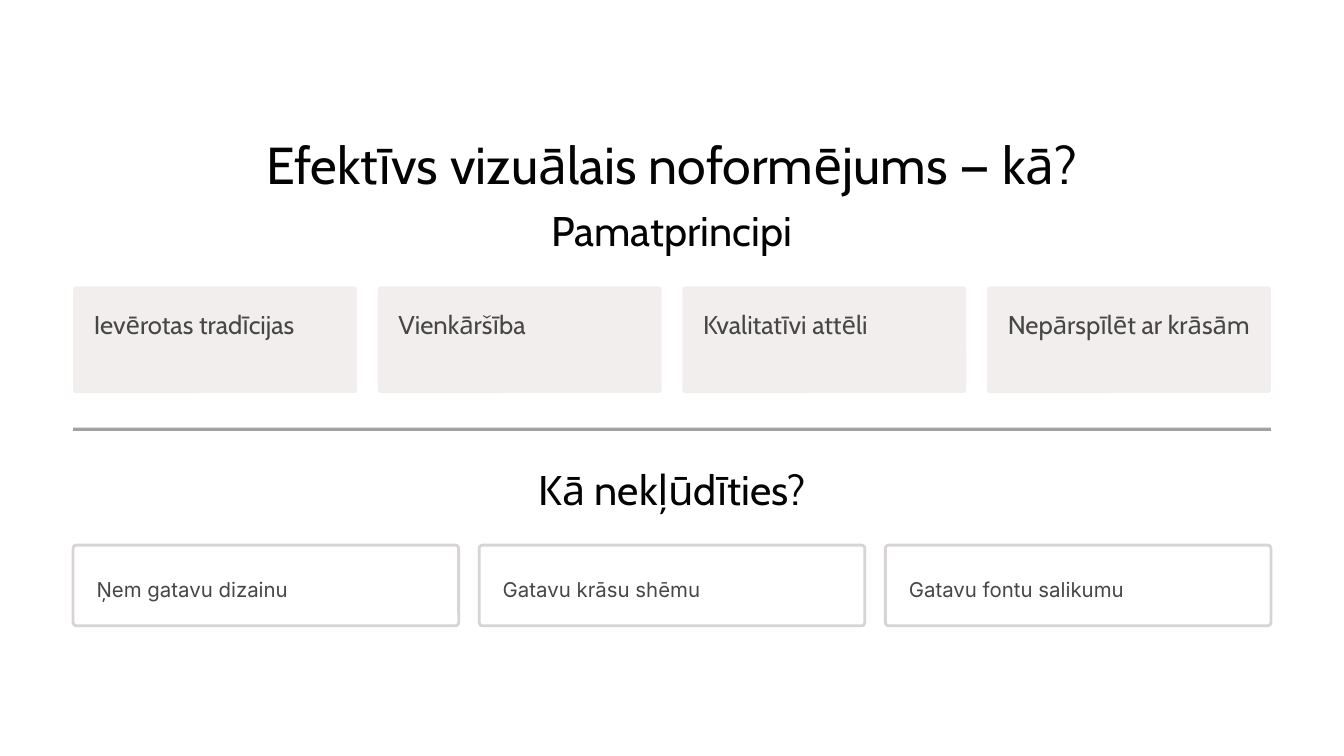
from lxml import etree
from pptx import Presentation
from pptx import util as u
from pptx.dml.color import RGBColor
from pptx.enum import shapes, text
from pptx.oxml import ns

COLORS = {"paper": "FFFFFF", "title": "030303", "body": "464646",
          "card": "F2EEEE", "outline": "D8D4D4"}
TITLE = {"name": "Cabin", "size": 44.5, "color": "title", "leading": 55.5, "align": "CENTER"}
HEADING = {"name": "Cabin", "size": 35.5, "color": "title", "leading": 44.5, "align": "CENTER"}
PRINCIPLE = {"name": "Cabin", "size": 22, "color": "body", "leading": 27.5, "align": "LEFT"}
TIP = {"name": "Inter", "size": 17.5, "color": "body", "leading": 28.5, "align": "LEFT"}
FILLED = {"fill": "card", "line": None, "radius": 0.029, "inset": 17.8, "gap": 17.76}
OUTLINED = {"fill": "paper", "line": "outline", "radius": 0.039, "inset": 20.16, "gap": 17.64}


def rgb(name):
    """Return the named colour."""
    return RGBColor.from_string(COLORS[name])


def add_label(page, box, wording, style):
    """Place one line of styled text in the box."""
    frame = page.shapes.add_textbox(*map(u.Pt, box)).text_frame
    settings = {"margin_left": 0, "margin_top": 0, "margin_right": 0,
                "margin_bottom": 0, "word_wrap": False}
    for name, value in settings.items():
        setattr(frame, name, value)
    para = frame.paragraphs[0]
    para.alignment = getattr(text.PP_ALIGN, style["align"])
    para.line_spacing = u.Pt(style["leading"])
    span = para.add_run()
    span.text = wording
    for name, value in {"name": style["name"], "size": u.Pt(style["size"])}.items():
        setattr(span.font, name, value)
    span.font.color.rgb = rgb(style["color"])


def add_panel(page, box, kind, fill, line=None):
    """Place a flat shape in the box and return it."""
    panel = page.shapes.add_shape(kind, *map(u.Pt, box))
    panel.shadow.inherit = False
    panel.fill.solid()
    panel.fill.fore_color.rgb = rgb(fill)
    if line:
        panel.line.color.rgb = rgb(line)
        panel.line.width = u.Pt(2.4)
    else:
        panel.line.fill.background()
    return panel


def add_cards(page, box, wordings, card, style):
    """Split the box into equal cards, each with its text."""
    left, top, width, height = box
    step = (width + card["gap"]) / len(wordings)
    card_width = step - card["gap"]
    inset = card["inset"]
    for index, wording in enumerate(wordings):
        x = left + index * step
        panel = add_panel(page, (x, top, card_width, height),
                          shapes.MSO_SHAPE.ROUNDED_RECTANGLE, card["fill"], card["line"])
        panel.adjustments[0] = card["radius"]
        label_box = (x + inset, top + inset, card_width - 2 * inset, style["leading"])
        add_label(page, label_box, wording, style)


def add_divider(page, box):
    """Place a half-transparent rule in the box."""
    rule = add_panel(page, box, shapes.MSO_SHAPE.RECTANGLE, "body")
    color = rule.fill._xPr.find(ns.qn("a:solidFill"))[0]
    etree.SubElement(color, ns.qn("a:alpha")).set("val", "50000")


def add_section(page, box, heading, wordings, card, style):
    """Place a centred heading with a row of cards 71.2 points below its top."""
    left, top, width, height = box
    offset = 71.2
    add_label(page, (left, top, width, 44.5), heading, HEADING)
    add_cards(page, (left, top + offset, width, height - offset), wordings, card, style)


def build_design_page(page, box):
    """Place the title, both sections and the divider in the box."""
    left, top, width, _ = box
    add_label(page, (left, top, width, 55.5), "Efektīvs vizuālais noformējums — kā?", TITLE)
    add_section(page, (left, top + 62.7, width, 162.6), "Pamatprincipi",
                ["Ievērotas tradīcijas", "Vienkāršība", "Kvalitatīvi attēli",
                 "Nepārspīlēt ar krāsām"], FILLED, PRINCIPLE)
    add_divider(page, (left, top + 254.9, width, 2.9))
    add_section(page, (left, top + 284.5, width, 140.3), "Kā nekļūdīties?",
                ["Ņem gatavu dizainu", "Gatavu krāsu shēmu", "Gatavu fontu salikumu"],
                OUTLINED, TIP)


def main():
    """Build and save the deck."""
    deck = Presentation()
    deck.slide_width, deck.slide_height = u.Pt(1152), u.Pt(648)
    page = deck.slides.add_slide(deck.slide_layouts[6])
    page.background.fill.solid()
    page.background.fill.fore_color.rgb = rgb("paper")
    build_design_page(page, (62.64, 111.6, 1026.72, 424.8))
    deck.save("out.pptx")


if __name__ == "__main__":
    main()
